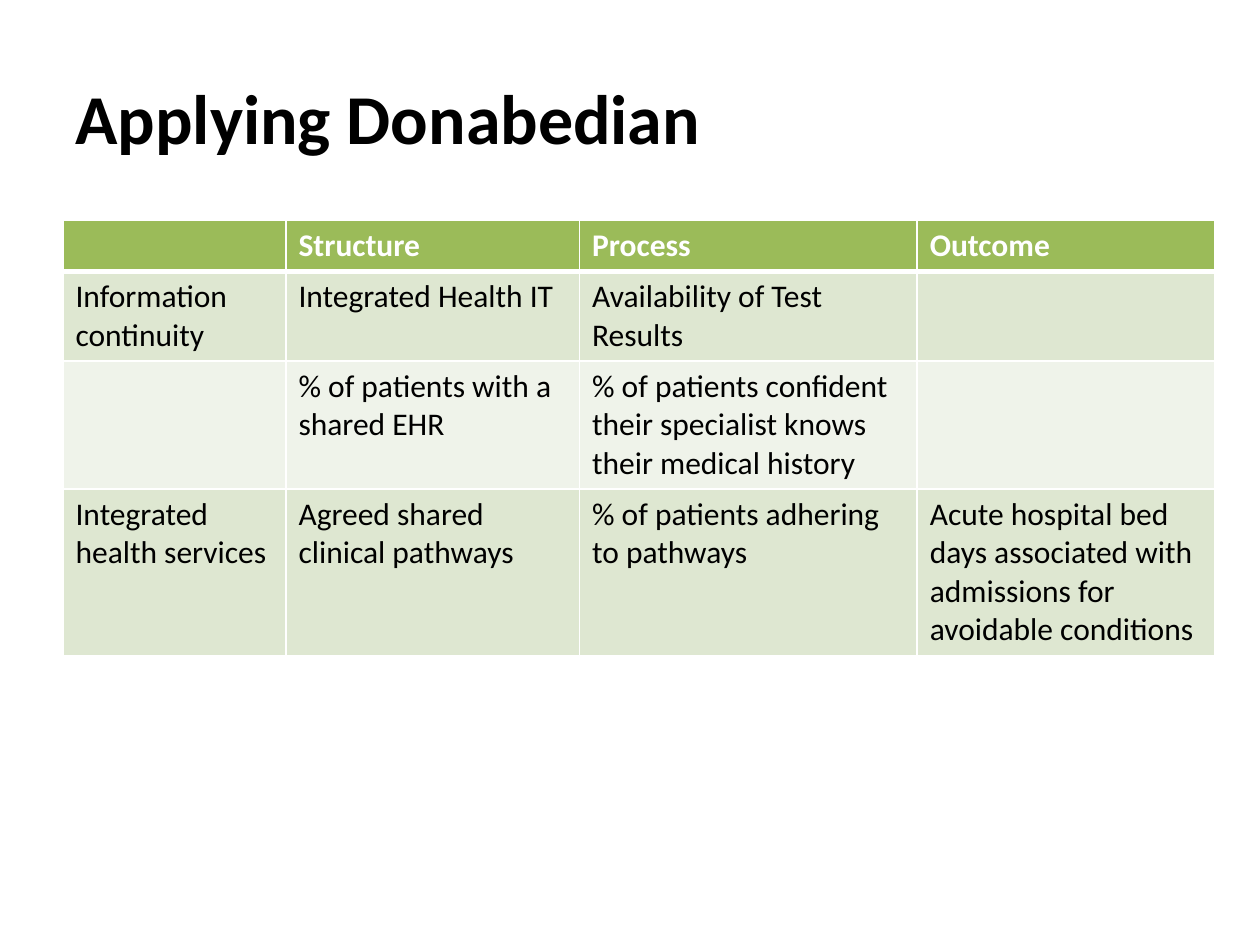
"""Build a slide with a table applying the Donabedian model."""
from dataclasses import dataclass

from lxml.etree import SubElement
from pptx import Presentation
from pptx.dml.color import RGBColor
from pptx.enum.text import MSO_ANCHOR, PP_ALIGN
from pptx.oxml.ns import qn
from pptx.slide import Slide
from pptx.table import _Cell
from pptx.text.text import _Paragraph
from pptx.util import Inches, Pt

FONT = "Calibri"
BLACK = RGBColor(0x00, 0x00, 0x00)
WHITE = RGBColor(0xFF, 0xFF, 0xFF)
GREEN = RGBColor(0x9B, 0xBB, 0x59)
SAGE = RGBColor(0xDE, 0xE7, 0xD1)
PALE = RGBColor(0xEF, 0xF3, 0xEA)

WIDTHS = (1.77, 2.33, 2.68, 2.36)


@dataclass
class Row:
    """One table row with its height in inches and its colours."""
    texts: tuple[str, ...]
    height: float
    fill: RGBColor
    ink: RGBColor = BLACK
    bold: bool = False


ROWS = (
    Row(("", "Structure", "Process", "Outcome"), 0.4, GREEN, WHITE, True),
    Row(("Information continuity", "Integrated Health IT",
         "Availability of Test Results", ""), 0.71, SAGE),
    Row(("", "% of patients with a shared EHR",
         "% of patients confident their specialist knows their medical history",
         ""), 1.01, PALE),
    Row(("Integrated health services", "Agreed shared clinical pathways",
         "% of patients adhering to pathways",
         "Acute hospital bed days associated with admissions for avoidable conditions"),
        1.32, SAGE),
)


def style_text(para: _Paragraph, size: int, ink: RGBColor, bold: bool) -> None:
    """Format every run of a paragraph."""
    for run in para.runs:
        run.font.name = FONT
        run.font.size = Pt(size)
        run.font.bold = bold
        run.font.color.rgb = ink


def add_edge(cell: _Cell, side: str, width: float) -> None:
    """Draw one white border of a cell."""
    props = cell._tc.get_or_add_tcPr()
    edge = SubElement(props, qn(f"a:ln{side}"), w=str(Pt(width)))
    fill = SubElement(edge, qn("a:solidFill"))
    SubElement(fill, qn("a:srgbClr"), val=str(WHITE))


def fill_cell(cell: _Cell, text: str, row: Row, top: float, base: float) -> None:
    """Set the borders, fill and text of a cell."""
    for side, width in (("L", 1), ("R", 1), ("T", top), ("B", base)):
        add_edge(cell, side, width)
    cell.fill.solid()
    cell.fill.fore_color.rgb = row.fill
    cell.text_frame.text = text
    style_text(cell.text_frame.paragraphs[0], 18, row.ink, row.bold)


def add_title(slide: Slide, text: str) -> None:
    """Place and format the slide title."""
    title = slide.shapes.title
    title.left, title.top = Inches(0.5), Inches(0.3)
    title.width, title.height = Inches(9), Inches(1.25)
    frame = title.text_frame
    frame.text = text
    frame.vertical_anchor = MSO_ANCHOR.MIDDLE
    para = frame.paragraphs[0]
    para.alignment = PP_ALIGN.LEFT
    style_text(para, 40, BLACK, True)


def add_grid(slide: Slide) -> None:
    """Add the table of measures."""
    height = sum(row.height for row in ROWS)
    table = slide.shapes.add_table(
        len(ROWS), len(WIDTHS), Inches(0.5), Inches(1.75),
        Inches(sum(WIDTHS)), Inches(height)).table
    for col, width in zip(table.columns, WIDTHS):
        col.width = Inches(width)
    for i, row in enumerate(ROWS):
        table.rows[i].height = Inches(row.height)
        top = 3 if i == 1 else 1
        base = 3 if i == 0 else 1
        for j, text in enumerate(row.texts):
            fill_cell(table.cell(i, j), text, row, top, base)


def main() -> None:
    """Create and save the deck."""
    deck = Presentation()
    deck.slide_width, deck.slide_height = Inches(10), Inches(7.5)
    slide = deck.slides.add_slide(deck.slide_layouts[5])
    add_title(slide, "Applying Donabedian")
    add_grid(slide)
    deck.save("out.pptx")


if __name__ == "__main__":
    main()
